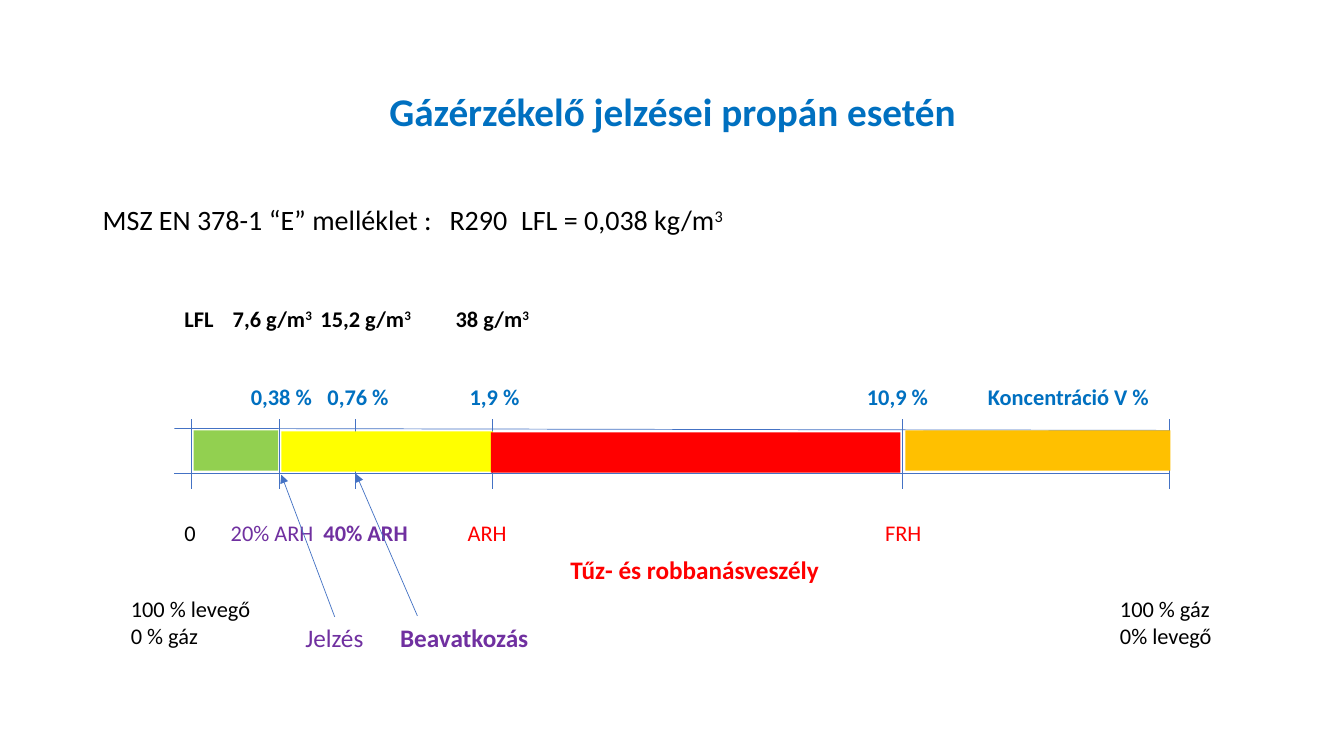
import pptx
import pptx.util
import pptx.dml.color
import pptx.enum.shapes
import pptx.enum.text
import pptx.oxml.ns
import lxml.etree

Inches = pptx.util.Inches
FONT = "Calibri"
BLACK, BLUE, PURPLE, RED, LINE = "000000", "0070C0", "7030A0", "FF0000", "4472C4"


def color(code):
    return pptx.dml.color.RGBColor.from_string(code)


def sub(parent, tag, **attrs):
    return lxml.etree.SubElement(parent, pptx.oxml.ns.qn(tag), **attrs)


def add_run(para, text, size, code=BLACK, bold=False, sup=False):
    run = para.add_run()
    run.text = text
    font = run.font
    font.name, font.size, font.bold = FONT, pptx.util.Pt(size), bold
    font.color.rgb = color(code)
    if sup:
        run._r.get_or_add_rPr().set("baseline", "30000")


def add_box(slide, box, wrap=True):
    frame = slide.shapes.add_textbox(*map(Inches, box)).text_frame
    frame.word_wrap = wrap
    return frame.paragraphs[0]


def add_row(slide, box, stops, runs, size=16):
    """One line of text; stops are offsets from the left of the box."""
    para = add_box(slide, box)
    tabs = sub(para._p.get_or_add_pPr(), "a:tabLst")
    for stop in stops:
        sub(tabs, "a:tab", pos=str(Inches(stop - 0.1)), algn="l")
    for text, *style in runs:
        add_run(para, text, size, *style)
    return para


def add_note(slide, box, lines, size=16, code=BLACK, bold=False):
    para = add_box(slide, box, wrap=False)
    for i, text in enumerate(lines):
        if i:
            para.add_line_break()
        add_run(para, text, size, code, bold)


def add_line(slide, start, end, arrow=False):
    line = slide.shapes.add_connector(
        pptx.enum.shapes.MSO_CONNECTOR.STRAIGHT, *map(Inches, start + end))
    line.line.color.rgb = color(LINE)
    line.line.width = pptx.util.Pt(0.5)
    if arrow:
        sub(line.line._get_or_add_ln(), "a:tailEnd", type="triangle")
    sub(line._element.spPr, "a:effectLst")


def add_head(slide, box):
    title = slide.shapes.title
    title.left, title.top, title.width, title.height = map(Inches, box)
    frame = title.text_frame
    frame.word_wrap = True
    frame.auto_size = pptx.enum.text.MSO_AUTO_SIZE.NONE
    frame.vertical_anchor = pptx.enum.text.MSO_ANCHOR.MIDDLE
    para = frame.paragraphs[0]
    para.alignment = pptx.enum.text.PP_ALIGN.CENTER
    para.line_spacing = 0.9
    add_run(para, "Gázérzékelő jelzései propán esetén", 28, BLUE, True)


def add_intro(slide, box):
    para = add_row(slide, box, [3.54, 4.25], [
        ["MSZ EN 378-1 “E” melléklet :\tR290\tLFL = 0,038 kg/m"],
        ["3", BLACK, False, True]], 20)
    para.line_spacing = 0.9


def add_scale(slide, box):
    left, top, width, height = box
    right = left + width

    # Axis lines and ticks
    add_line(slide, (left, top + 0.09), (right, top + 0.11))
    add_line(slide, (left, top + 0.54), (right, top + 0.54))
    for tick in (0.17, 1.04, 1.79, 3.15, 7.22, width):
        add_line(slide, (left + tick, top), (left + tick, top + height))

    # Coloured zones
    zones = [(1.06, 0.12, 2.1, "FFFF00"), (3.14, 0.13, 4.06, RED),
             (7.25, 0.11, 2.63, "FFC000"), (0.19, 0.11, 0.84, "92D050")]
    for x, y, wide, code in zones:
        zone = slide.shapes.add_shape(
            pptx.enum.shapes.MSO_SHAPE.RECTANGLE,
            *map(Inches, (left + x, top + y, wide, 0.4)))
        zone.shadow.inherit = False
        zone.fill.solid()
        zone.fill.fore_color.rgb = color(code)
        zone.line.fill.background()

    # Rows of values above and below
    mass = []
    for text in ("LFL\t7,6 g/m", "\t15,2 g/m", "\t38 g/m"):
        mass += [[text, BLACK, True], ["3", BLACK, True, True]]
    add_row(slide, (left, top - 1.18, 8.42, 0.37), [0.58, 1.45, 2.79], mass)
    add_row(slide, (left + 0.17, top - 0.41, 9.7, 0.37),
            [0.59, 1.35, 2.76, 6.7, 7.9],
            [["\t0,38 %\t0,76 %\t1,9 %\t10,9 %\tKoncentráció V %", BLUE, True]])
    add_row(slide, (left, top + 0.94, 9.28, 0.37), [0.56, 1.48, 2.91, 7.05],
            [["0"], ["\t20% ARH", PURPLE], ["\t40% ARH", PURPLE, True],
             ["\tARH\tFRH", RED]])


def add_notes(slide, box):
    left, top, width, _ = box
    # Gas and air shares at both ends
    add_note(slide, (left, top + 0.41, 1.4, 0.64), ["100 % levegő", "0 % gáz"])
    add_note(slide, (left + width - 1.12, top + 0.41, 1.12, 0.64),
             ["100 % gáz", "0% levegő"])
    # Alarm levels and danger zone
    add_note(slide, (left + 1.73, top + 0.67, 0.8, 0.4), ["Jelzés"], 18, PURPLE)
    add_note(slide, (left + 2.67, top + 0.67, 1.48, 0.4), ["Beavatkozás"],
             18, PURPLE, True)
    add_line(slide, (left + 2.12, top + 0.67), (left + 1.59, top - 0.74), True)
    add_line(slide, (left + 2.94, top + 0.66), (left + 2.33, top - 0.75), True)
    add_row(slide, (left + 4.36, top, 2.99, 0.4), [],
            [["Tűz- és robbanásveszély", RED, True]], 18)


def main():
    deck = pptx.Presentation()
    deck.slide_width, deck.slide_height = Inches(13.33), Inches(7.5)
    slide = deck.slides.add_slide(deck.slide_layouts[5])
    add_head(slide, (0.92, 0.4, 11.5, 1.45))
    add_intro(slide, (0.92, 2, 11.5, 4.76))
    add_scale(slide, (1.73, 4.16, 9.87, 0.69))
    add_notes(slide, (1.2, 5.45, 10.93, 1.05))
    deck.save("out.pptx")


if __name__ == "__main__":
    main()
